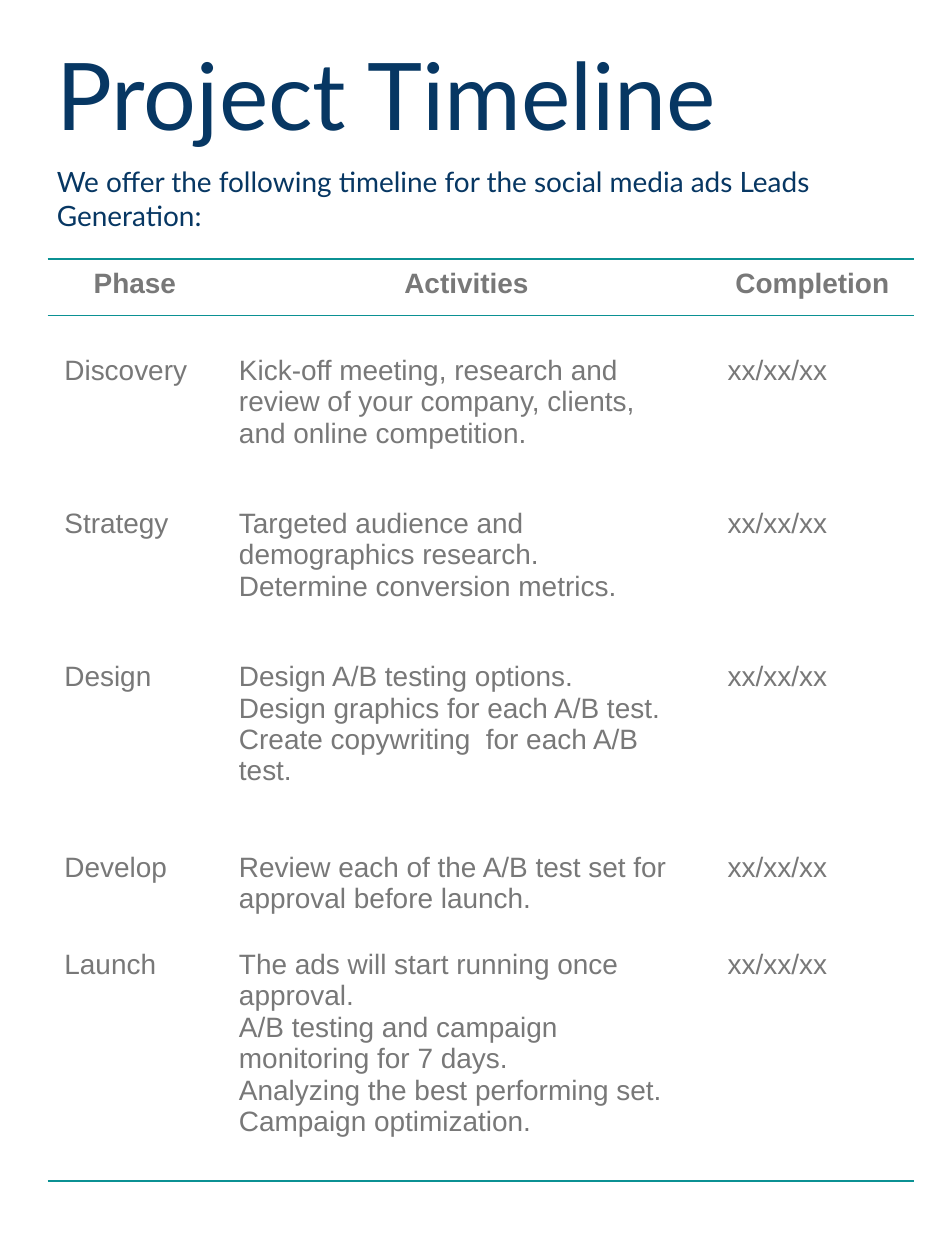
from lxml import etree
from pptx import Presentation
from pptx import util as u
from pptx.dml import color
from pptx.enum import text
from pptx.oxml import ns

NAVY, GREY, TEAL = "073763", "787878", "0B9193"
HEADINGS = ["Phase", "Activities", "Completion"]
PHASES = [
    ("Discovery", ["Kick-off meeting, research and review of your company, clients,  and online competition."]),
    ("Strategy", ["Targeted audience and demographics research.", "Determine conversion metrics."]),
    ("Design", ["Design A/B testing options.", "Design graphics for each A/B test.",
                "Create copywriting  for each A/B test."]),
    ("Develop", ["Review each of the A/B test set for approval before launch."]),
    ("Launch", ["The ads will start running once approval.", "A/B testing and campaign monitoring for 7 days.",
                "Analyzing the best performing set.", "Campaign optimization."]),
]
DATE = "xx/xx/xx"
COLUMN_WIDTHS = [2.64, 7.39, 3.07]
ROW_HEIGHTS = [0.85, 2.31, 2.32, 3.35, 1.47, 3.63]
ROW_MARGINS = [0.13, 0.6, 0.6, 0.6, 0.13, 0.13]


def rgb(value):
    return color.RGBColor.from_string(value)


def format_text(frame, font, size, shade, bold=False, align=text.PP_ALIGN.LEFT):
    for para in frame.paragraphs:
        para.alignment = align
        for span in para.runs:
            span.font.name = font
            span.font.size = u.Pt(size)
            span.font.bold = bold
            span.font.color.rgb = rgb(shade)


def fill_box(box, words, size, left, top, width, height):
    box.left, box.top, box.width, box.height = map(u.Cm, (left, top, width, height))
    frame = box.text_frame
    frame.text = words
    frame.word_wrap = True
    frame.auto_size = text.MSO_AUTO_SIZE.NONE
    frame.vertical_anchor = text.MSO_ANCHOR.TOP
    frame.margin_left = frame.margin_right = u.Cm(0.16)
    frame.margin_top = frame.margin_bottom = u.Cm(0.08)
    format_text(frame, "Lato", size, NAVY)


def set_borders(cell, ruled_sides):
    properties = cell._tc.get_or_add_tcPr()
    for position, side in enumerate("LRTB"):
        line = etree.Element(ns.qn(f"a:ln{side}"), w=str(u.Pt(1)))
        if side in ruled_sides:
            fill = etree.SubElement(line, ns.qn("a:solidFill"))
            etree.SubElement(fill, ns.qn("a:srgbClr"), val=TEAL)
        else:
            etree.SubElement(line, ns.qn("a:noFill"))
        properties.insert(position, line)


def add_heading(page, left, top, width):
    fill_box(page.shapes.title, "Project Timeline", 40, left, top, width, 2.69)
    intro = page.shapes.add_textbox(0, 0, 0, 0)
    fill_box(intro, "We offer the following timeline for the social media ads Leads Generation:",
             12, left, top + 1.93, width - 0.66, 1.5)


def add_timeline(page, left, top):
    rows = [HEADINGS] + [(phase, "\n".join(activities), DATE) for phase, activities in PHASES]
    size = sum(COLUMN_WIDTHS), sum(ROW_HEIGHTS)
    table = page.shapes.add_table(len(rows), len(HEADINGS), *map(u.Cm, (left, top, *size))).table
    table.first_row = table.horz_banding = False
    for column, width in zip(table.columns, COLUMN_WIDTHS):
        column.width = u.Cm(width)
    ruled_sides = {0: "TB", 1: "T", len(rows) - 1: "B"}
    for index, words in enumerate(rows):
        table.rows[index].height = u.Cm(ROW_HEIGHTS[index])
        header = index == 0
        align = text.PP_ALIGN.CENTER if header else text.PP_ALIGN.LEFT
        for cell, content in zip(table.rows[index].cells, words):
            cell.text_frame.text = content
            cell.margin_top = u.Cm(ROW_MARGINS[index])
            cell.fill.background()
            set_borders(cell, ruled_sides.get(index, ""))
            format_text(cell.text_frame, "Arial", 12, GREY, header, align)


def main():
    deck = Presentation()
    deck.slide_width, deck.slide_height = u.Cm(14.29), u.Cm(19.05)
    page = deck.slides.add_slide(deck.slide_layouts[5])
    add_heading(page, 0.7, 0.48, 12.62)
    add_timeline(page, 0.72, 3.92)
    deck.save("out.pptx")


if __name__ == "__main__":
    main()
